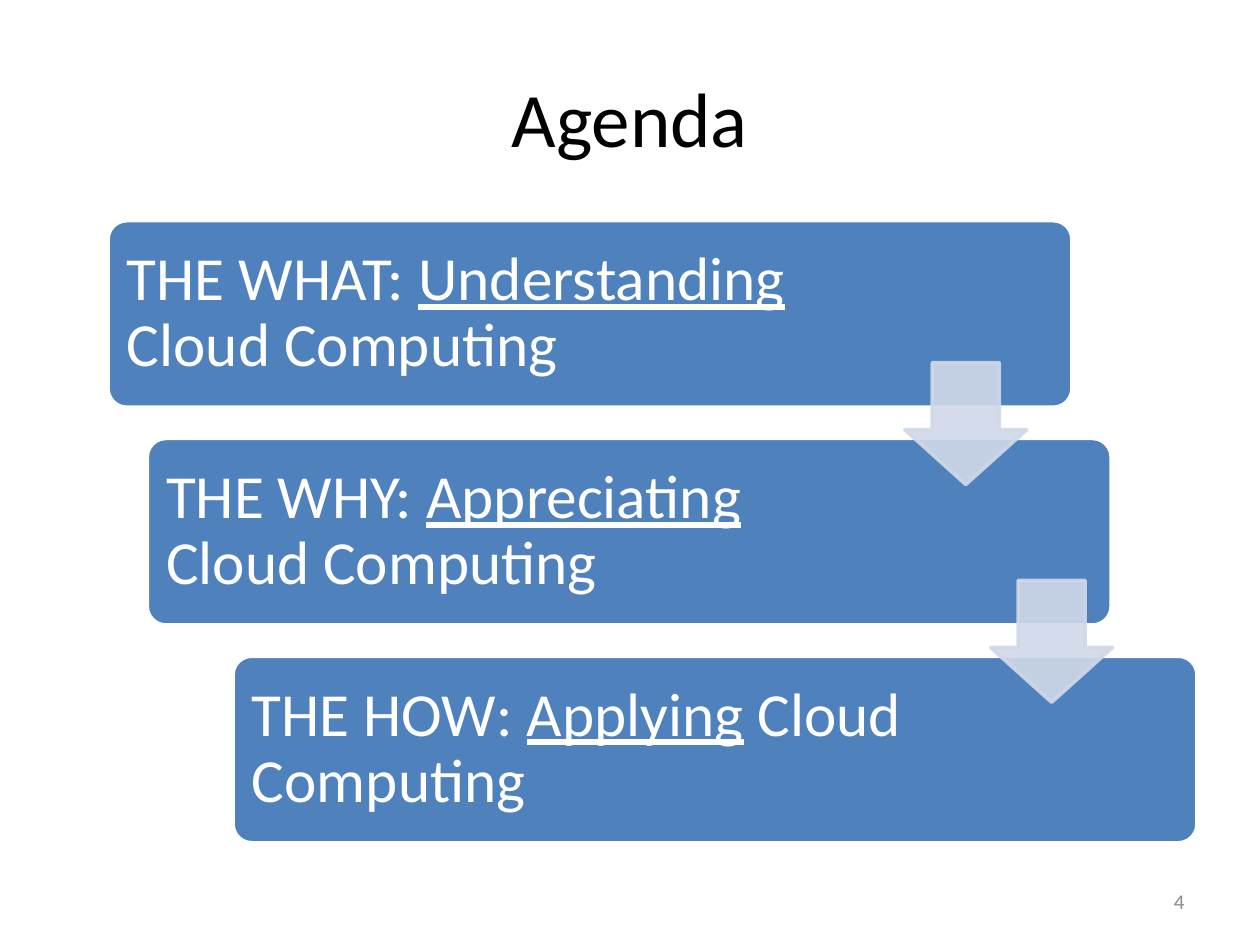
from lxml.etree import SubElement
from pptx import Presentation
from pptx.dml.color import RGBColor
from pptx.enum.shapes import MSO_SHAPE
from pptx.enum.text import MSO_ANCHOR, PP_ALIGN
from pptx.oxml.ns import qn
from pptx.util import Cm, Pt

HUES = {"ink": "000000", "box": "4F81BD", "white": "FFFFFF",
        "arrow": "D0D8E8", "gray": "8C8C8C"}

# Left edge, text width, lead, stressed word
STEPS = [
    (2.18, 15.57, "THE WHAT: ", "Understanding"),
    (2.97, 15.27, "THE WHY: ", "Appreciating"),
    (4.7, 15.27, "THE HOW: ", "Applying"),
]
TOP, PITCH = 4.45, 4.39
WIDE, HIGH = 19.43, 3.76
ARROW = 2.46


class Deck:
    def __init__(self, slide, font="Calibri"):
        self.slide = slide
        self.font = font

    def shape(self, kind, place, hue, edge, adjust, alpha=None):
        """Add a preset shape; alpha is the opacity in percent."""
        item = self.slide.shapes.add_shape(kind, *map(Cm, place))
        item.shadow.inherit = False
        for i, value in enumerate(adjust):
            item.adjustments[i] = value
        item.line.width = Pt(2)
        for fill, name in ((item.fill, hue), (item.line.fill, edge)):
            fill.solid()
            fill.fore_color.rgb = RGBColor.from_string(HUES[name])
        if alpha is not None:
            for tint in item._element.spPr.iter(qn("a:srgbClr")):
                SubElement(tint, qn("a:alpha"), val=str(alpha * 1000))

    def text(self, place, runs, size, hue, align=PP_ALIGN.LEFT,
             inset=None, space=None):
        """Add a text box; runs are pairs of words and underline."""
        frame = self.slide.shapes.add_textbox(*map(Cm, place)).text_frame
        frame.word_wrap = True
        frame.vertical_anchor = MSO_ANCHOR.MIDDLE
        if inset is not None:
            frame.margin_left = frame.margin_right = Cm(inset)
            frame.margin_top = frame.margin_bottom = Cm(inset)
        para = frame.paragraphs[0]
        para.alignment = align
        para.line_spacing = space
        for words, under in runs:
            run = para.add_run()
            run.text = words
            run.font.name = self.font
            run.font.size = Pt(size)
            run.font.underline = under
            run.font.color.rgb = RGBColor.from_string(HUES[hue])

    def step(self, left, top, width, lead, stress):
        self.shape(MSO_SHAPE.ROUNDED_RECTANGLE, (left, top, WIDE, HIGH),
                   "box", "white", [0.1])
        runs = [(lead, False), (stress, True), (" Cloud Computing", False)]
        self.text((left, top, width, HIGH), runs, 35, "white",
                  inset=0.38, space=0.9)

    def arrow(self, left, top):
        self.shape(MSO_SHAPE.DOWN_ARROW, (left, top, ARROW, ARROW),
                   "arrow", "arrow", [0.55, 0.45], alpha=90)


def main():
    show = Presentation()
    show.slide_width, show.slide_height = Cm(25.4), Cm(19.05)
    deck = Deck(show.slides.add_slide(show.slide_layouts[6]))

    deck.text((1.27, 0.76, 22.86, 3.18), [("Agenda", False)], 44, "ink",
              PP_ALIGN.CENTER)
    for i, (left, width, lead, stress) in enumerate(STEPS):
        deck.step(left, TOP + i * PITCH, width, lead, stress)
    # Each arrow starts where the text of the next step ends
    for i, (left, width, *_) in enumerate(STEPS[1:]):
        deck.arrow(left + width, TOP + i * PITCH + 2.86)
    deck.text((18.2, 17.65, 5.93, 1.02), [("4", False)], 12, "gray",
              PP_ALIGN.RIGHT)
    show.save("out.pptx")


if __name__ == "__main__":
    main()
